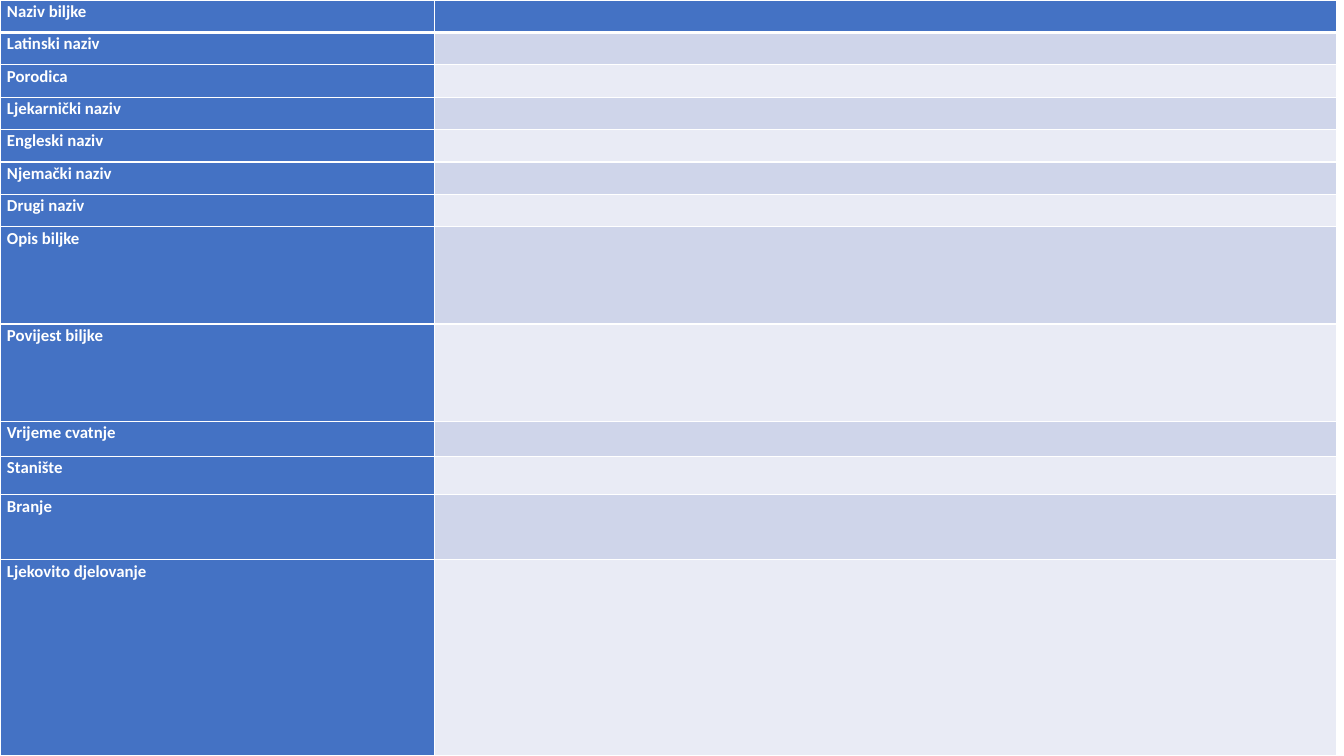
from lxml.etree import SubElement
from pptx import Presentation
from pptx.dml.color import RGBColor
from pptx.enum.text import PP_ALIGN as Align
from pptx.oxml import parse_xml
from pptx.oxml.ns import nsdecls, qn
from pptx.util import Pt

# Content: row label and row height in points
PLANT_ROWS = [
    ("Naziv biljke", 23.15),
    ("Latinski naziv", 23.15),
    ("Porodica", 23.15),
    ("Ljekarnički naziv", 23.15),
    ("Engleski naziv", 23.15),
    ("Njemački naziv", 23.15),
    ("Drugi naziv", 23.15),
    ("Opis biljke", 69.5),
    ("Povijest biljke", 69.5),
    ("Vrijeme cvatnje", 25.2),
    ("Stanište", 27.3),
    ("Branje", 46.4),
    ("Ljekovito djelovanje", 140),
]
COLUMN_WIDTHS = [310.3, 644.4]

THEME = {
    "label": "4472C4",
    "bands": ["E9EBF5", "CFD5EA"],
    "white": "FFFFFF",
    "font": "Calibri",
    "size": 12,
    "rule": 1,
    "header_rule": 3,
}
CELL_FORMAT = {"margin_left": Pt(5), "margin_right": Pt(5),
               "margin_top": 0, "margin_bottom": 0}
PARA_FORMAT = {"alignment": Align.JUSTIFY, "line_spacing": 1.07, "space_after": Pt(8)}
FONT_FORMAT = {"name": THEME["font"], "size": Pt(THEME["size"]), "bold": True}


def set_all(target, values):
    for name, value in values.items():
        setattr(target, name, value)


def set_borders(cell, widths):
    """Draw white borders; widths run left, right, top, bottom."""
    properties = cell._tc.get_or_add_tcPr()
    for place, (side, width) in enumerate(zip("LRTB", widths)):
        properties.insert(place, parse_xml(
            f'<a:ln{side} {nsdecls("a")} w="{Pt(width)}"><a:solidFill>'
            f'<a:srgbClr val="{THEME["white"]}"/></a:solidFill></a:ln{side}>'))


def fill_cell(cell, color, text):
    set_all(cell, CELL_FORMAT)
    cell.fill.solid()
    cell.fill.fore_color.rgb = RGBColor.from_string(color)
    para = cell.text_frame.paragraphs[0]
    if text:
        set_all(para, PARA_FORMAT)
        span = para.add_run()
        span.text = text
        set_all(span.font, FONT_FORMAT)
        span.font.color.rgb = RGBColor.from_string(THEME["white"])
    else:
        # Keep empty cells from stretching their row
        SubElement(para._p, qn("a:endParaRPr"), sz=str(THEME["size"] * 100))


def main():
    deck = Presentation()
    set_all(deck, {"slide_width": Pt(960), "slide_height": Pt(540)})
    page = deck.slides.add_slide(deck.slide_layouts[6])

    # Table grid
    heights = [height for _, height in PLANT_ROWS]
    table = page.shapes.add_table(len(PLANT_ROWS), len(COLUMN_WIDTHS), 0, 0,
                                  Pt(sum(COLUMN_WIDTHS)), Pt(sum(heights))).table
    for column, width in zip(table.columns, COLUMN_WIDTHS):
        column.width = Pt(width)

    # Label column and banded answer column
    thin, thick = THEME["rule"], THEME["header_rule"]
    for index, (label, height) in enumerate(PLANT_ROWS):
        table.rows[index].height = Pt(height)
        answer_color = THEME["bands"][index % 2] if index else THEME["label"]
        top = thick if index == 1 else thin
        bottom = thick if index == 0 else thin
        for column, (color, text) in enumerate([(THEME["label"], label), (answer_color, "")]):
            cell = table.cell(index, column)
            fill_cell(cell, color, text)
            set_borders(cell, [thin, thin, top, bottom])

    deck.save("out.pptx")


if __name__ == "__main__":
    main()
